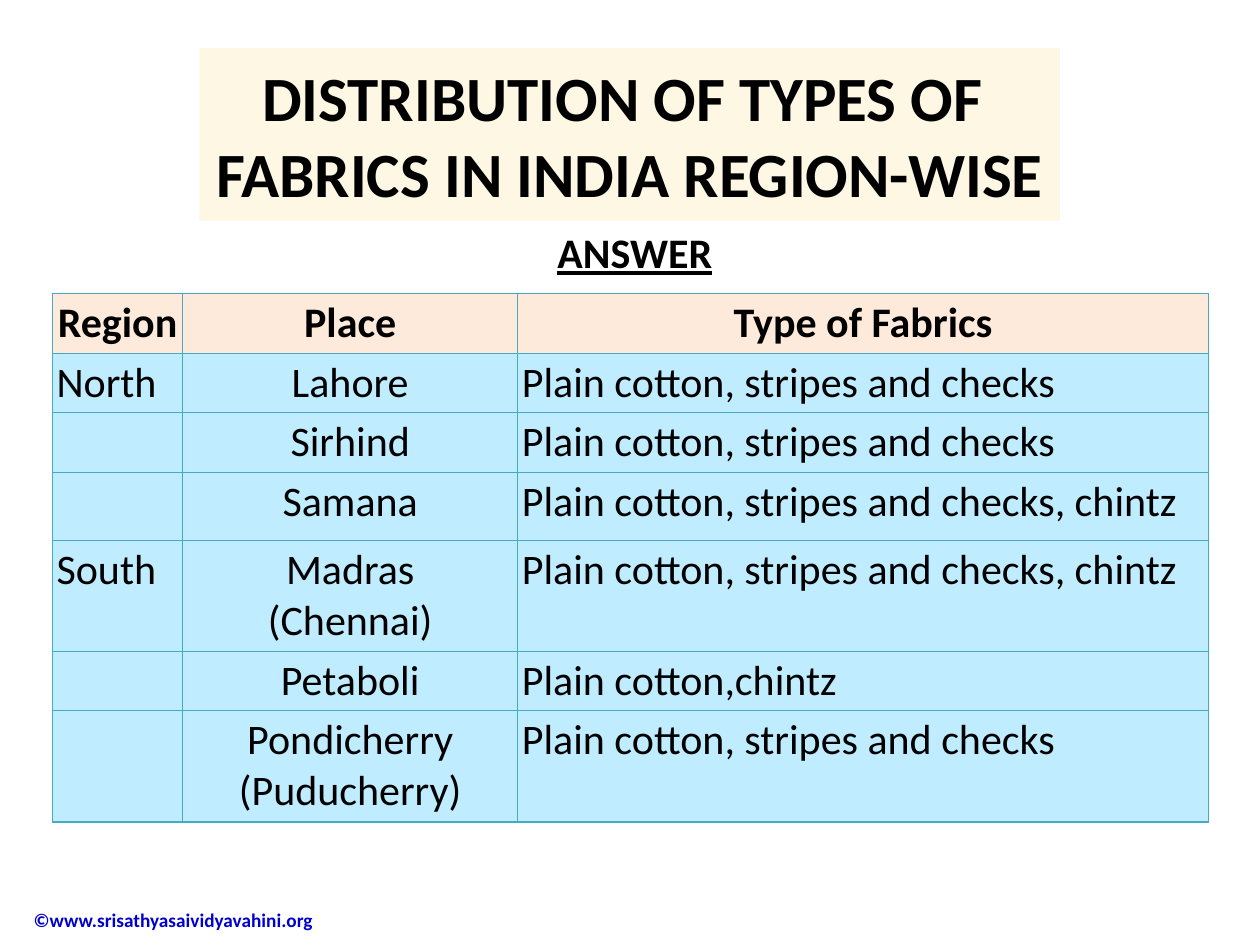
import pptx
import pptx.util
import pptx.dml.color
import pptx.enum.shapes
import pptx.enum.text
import pptx.oxml
import pptx.oxml.ns

Cm = pptx.util.Cm
ALIGN = pptx.enum.text.PP_ALIGN
MIDDLE = pptx.enum.text.MSO_ANCHOR.MIDDLE

HEADER = ("Region", "Place", "Type of Fabrics")
FABRICS = [
    ("North", "Lahore", "Plain cotton, stripes and checks"),
    ("", "Sirhind", "Plain cotton, stripes and checks"),
    ("", "Samana", "Plain cotton, stripes and checks, chintz"),
    ("South", "Madras\n(Chennai)", "Plain cotton, stripes and checks, chintz"),
    ("", "Petaboli", "Plain cotton,chintz"),
    ("", "Pondicherry\n(Puducherry)", "Plain cotton, stripes and checks"),
]
COLUMN_WIDTHS = (2.62, 6.76, 13.92)
ROW_HEIGHTS = (1.2, 1.2, 1.2, 1.37, 2.24, 1.2, 2.24)


def rgb(hex_code):
    return pptx.dml.color.RGBColor.from_string(hex_code)


def write(frame, text, size=24, color="000000", bold=False, underline=None,
          align=ALIGN.LEFT):
    """Fill a text frame; a newline starts a paragraph, \\v breaks a line."""
    frame.text = text
    for paragraph in frame.paragraphs:
        paragraph.alignment = align
        font = paragraph.font
        font.name, font.size = "Calibri", pptx.util.Pt(size)
        font.bold, font.underline = bold, underline
        font.color.rgb = rgb(color)


def border(cell, color, width):
    properties = cell._tc.get_or_add_tcPr()
    for position, side in enumerate(("lnL", "lnR", "lnT", "lnB")):
        properties.insert(position, pptx.oxml.parse_xml(
            f'<a:{side} {pptx.oxml.ns.nsdecls("a")} w="{pptx.util.Pt(width)}">'
            f'<a:solidFill><a:srgbClr val="{color}"/></a:solidFill></a:{side}>'))


def add_title(slide, left, top, width, height):
    banner = slide.shapes.add_shape(
        pptx.enum.shapes.MSO_SHAPE.RECTANGLE,
        Cm(left), Cm(top), Cm(width), Cm(height))
    banner.shadow.inherit = False
    banner.fill.solid()
    banner.fill.fore_color.rgb = rgb("FDF7E3")
    banner.line.fill.background()
    banner.text_frame.word_wrap = True
    banner.text_frame.vertical_anchor = MIDDLE
    write(banner.text_frame,
          "DISTRIBUTION OF TYPES OF \vFABRICS IN INDIA REGION-WISE",
          size=36, bold=True, align=ALIGN.CENTER)


def add_answer_heading(slide, left, top, width, height):
    heading = slide.shapes.add_textbox(Cm(left), Cm(top), Cm(width), Cm(height))
    heading.text_frame.word_wrap = True
    write(heading.text_frame, "ANSWER", bold=True, underline=True,
          align=ALIGN.CENTER)


def add_fabric_table(slide, left, top):
    rows = [HEADER] + FABRICS
    table = slide.shapes.add_table(
        len(rows), len(HEADER), Cm(left), Cm(top),
        Cm(sum(COLUMN_WIDTHS)), Cm(sum(ROW_HEIGHTS))).table
    for column, width in zip(table.columns, COLUMN_WIDTHS):
        column.width = Cm(width)
    for row, height in zip(table.rows, ROW_HEIGHTS):
        row.height = Cm(height)

    for r, entries in enumerate(rows):
        is_header = r == 0
        for c, entry in enumerate(entries):
            cell = table.cell(r, c)
            cell.margin_left = cell.margin_right = Cm(0.08)
            cell.margin_top = cell.margin_bottom = Cm(0.08)
            cell.fill.solid()
            cell.fill.fore_color.rgb = rgb("FDEADA" if is_header else "BFECFF")
            border(cell, "46AAC5", 0.75)
            centred = is_header or HEADER[c] == "Place"
            write(cell.text_frame, entry, bold=is_header,
                  align=ALIGN.CENTER if centred else ALIGN.LEFT)


def add_footer(slide, left, top, width, height):
    footer = slide.shapes.add_textbox(Cm(left), Cm(top), Cm(width), Cm(height))
    footer.text_frame.word_wrap = True
    footer.text_frame.vertical_anchor = MIDDLE
    footer.text_frame.margin_left = Cm(1.52)
    write(footer.text_frame, "©www.srisathyasaividyavahini.org",
          size=11, color="0000CC", bold=True)


def main():
    deck = pptx.Presentation()
    deck.slide_width, deck.slide_height = Cm(25.4), Cm(19.05)
    slide = deck.slides.add_slide(deck.slide_layouts[6])

    add_footer(slide, -0.84, 18.03, 7.67, 1.04)
    add_fabric_table(slide, 1.06, 5.92)
    add_title(slide, 4.02, 0.97, 17.35, 3.48)
    add_answer_heading(slide, 10.36, 4.45, 4.88, 1.27)

    deck.save("out.pptx")


if __name__ == "__main__":
    main()
